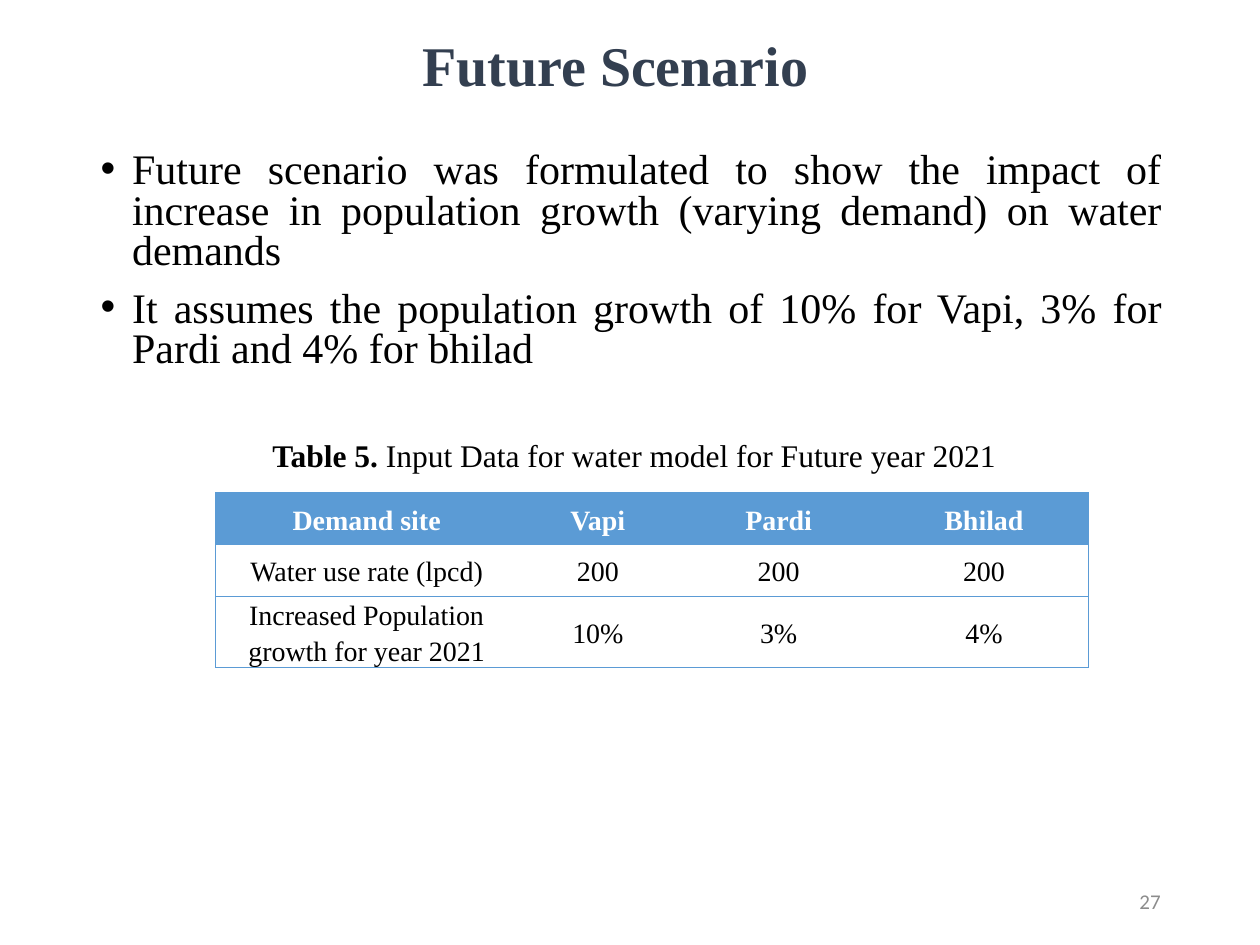
from lxml.etree import SubElement
from pptx import Presentation
from pptx.dml.color import RGBColor
from pptx.enum.text import MSO_ANCHOR as Anchor, PP_ALIGN as Align
from pptx.oxml.ns import qn
from pptx.util import Inches, Pt

NAVY = RGBColor(0x33, 0x3F, 0x50)
BLUE = RGBColor(0x5B, 0x9B, 0xD5)
BLACK = RGBColor(0, 0, 0)
WHITE = RGBColor(0xFF, 0xFF, 0xFF)
GRAY = RGBColor(0x8C, 0x8C, 0x8C)
SERIF, SANS = "Times New Roman", "Calibri"
WIDTH, HEIGHT = 10, 7.5


class Deck:
    """Holds the style and the current slide; places are shares of the slide."""

    def __init__(self):
        self.prs = Presentation()
        self.prs.slide_width, self.prs.slide_height = Inches(WIDTH), Inches(HEIGHT)
        self.slide = self.prs.slides.add_slide(self.prs.slide_layouts[6])

    def place(self, x, y, w, h):
        sw, sh = self.prs.slide_width, self.prs.slide_height
        return int(x * sw), int(y * sh), int(w * sw), int(h * sh)

    def run(self, p, text, size, color=BLACK, bold=False, font=SERIF):
        r = p.add_run()
        r.text = text
        r.font.size, r.font.name, r.font.bold = Pt(size), font, bold
        r.font.color.rgb = color

    def frame(self, box, anchor=Anchor.TOP):
        tf = self.slide.shapes.add_textbox(*self.place(*box)).text_frame
        tf.word_wrap = True
        tf.vertical_anchor = anchor
        return tf

    def line(self, box, runs, align=Align.CENTER, anchor=Anchor.TOP):
        p = self.frame(box, anchor).paragraphs[0]
        p.alignment = align
        for text, style in runs:
            self.run(p, text, **style)

    def bullets(self, box, items, size, top):
        tf = self.frame(box)
        tf.margin_top = Inches(top)
        for i, item in enumerate(items):
            p = tf.add_paragraph() if i else tf.paragraphs[0]
            p.alignment, p.line_spacing = Align.JUSTIFY, 0.8
            p.space_before = Pt(10 if i else 0)
            pPr = p._p.get_or_add_pPr()
            pPr.set("marL", str(Inches(0.25)))
            pPr.set("indent", str(-Inches(0.25)))
            SubElement(pPr, qn("a:buFont")).set("typeface", "Arial")
            SubElement(pPr, qn("a:buChar")).set("char", "•")
            self.run(p, item, size)

    def borders(self, cell, shown):
        tcPr = cell._tc.get_or_add_tcPr()
        for side in "LRTB":
            ln = SubElement(tcPr, qn(f"a:ln{side}"), w=str(Pt(0.5)))
            if side in shown:
                fill = SubElement(ln, qn("a:solidFill"))
                SubElement(fill, qn("a:srgbClr"), val=str(BLUE))
            else:
                SubElement(ln, qn("a:noFill"))

    def table(self, box, rows, widths, size):
        last = len(widths) - 1
        shape = self.slide.shapes.add_table(len(rows), len(widths), *self.place(*box))
        tbl = shape.table
        tbl.first_row = tbl.horz_banding = False
        for col, width in zip(tbl.columns, widths):
            col.width = Inches(width)
        for i, row in enumerate(rows):
            for j, text in enumerate(row):
                cell = tbl.cell(i, j)
                # Outer frame and row rules only
                self.borders(cell, "TB" + "L" * (j == 0) + "R" * (j == last))
                if i == 0:
                    cell.fill.solid()
                    cell.fill.fore_color.rgb = BLUE
                else:
                    cell.fill.background()
                cell.vertical_anchor = Anchor.MIDDLE
                cell.margin_left = cell.margin_right = Inches(0.07)
                cell.margin_top = cell.margin_bottom = 0
                p = cell.text_frame.paragraphs[0]
                p.alignment, p.line_spacing = Align.CENTER, 1.15
                self.run(p, text, size, BLACK if i else WHITE, bold=i == 0)


def main():
    deck = Deck()

    # Demand table
    deck.table((0.171, 3.91 / HEIGHT, 0.693, 1.23 / HEIGHT), [
        ["Demand site", "Vapi", "Pardi", "Bhilad"],
        ["Water use rate (lpcd)", "200", "200", "200"],
        ["Increased Population growth for year 2021", "10%", "3%", "4%"],
    ], [2.4, 1.27, 1.6, 1.66], size=16)

    # Title and slide number
    deck.line((0.074, 0.19 / HEIGHT, 0.829, 0.64 / HEIGHT),
              [("Future Scenario", dict(size=32, color=NAVY, bold=True))])
    deck.line((0.706, 6.95 / HEIGHT, 0.225, 0.4 / HEIGHT),
              [("27", dict(size=12, color=GRAY, font=SANS))],
              Align.RIGHT, Anchor.MIDDLE)

    # Assumptions
    deck.bullets((0.07, 0.63 / HEIGHT, 0.862, 2.35 / HEIGHT), [
        "Future scenario was formulated to show the impact of increase in "
        "population growth (varying demand) on water demands",
        "It assumes the population growth of 10% for Vapi, 3% for Pardi "
        "and 4% for bhilad",
    ], size=24, top=0.58)

    # Table caption
    deck.line((0.079, 3.41 / HEIGHT, 0.849, 0.4 / HEIGHT), [
        ("Table 5.", dict(size=18, bold=True)),
        (" Input Data for water model for Future year 2021", dict(size=18)),
    ])

    deck.prs.save("out.pptx")


if __name__ == "__main__":
    main()
